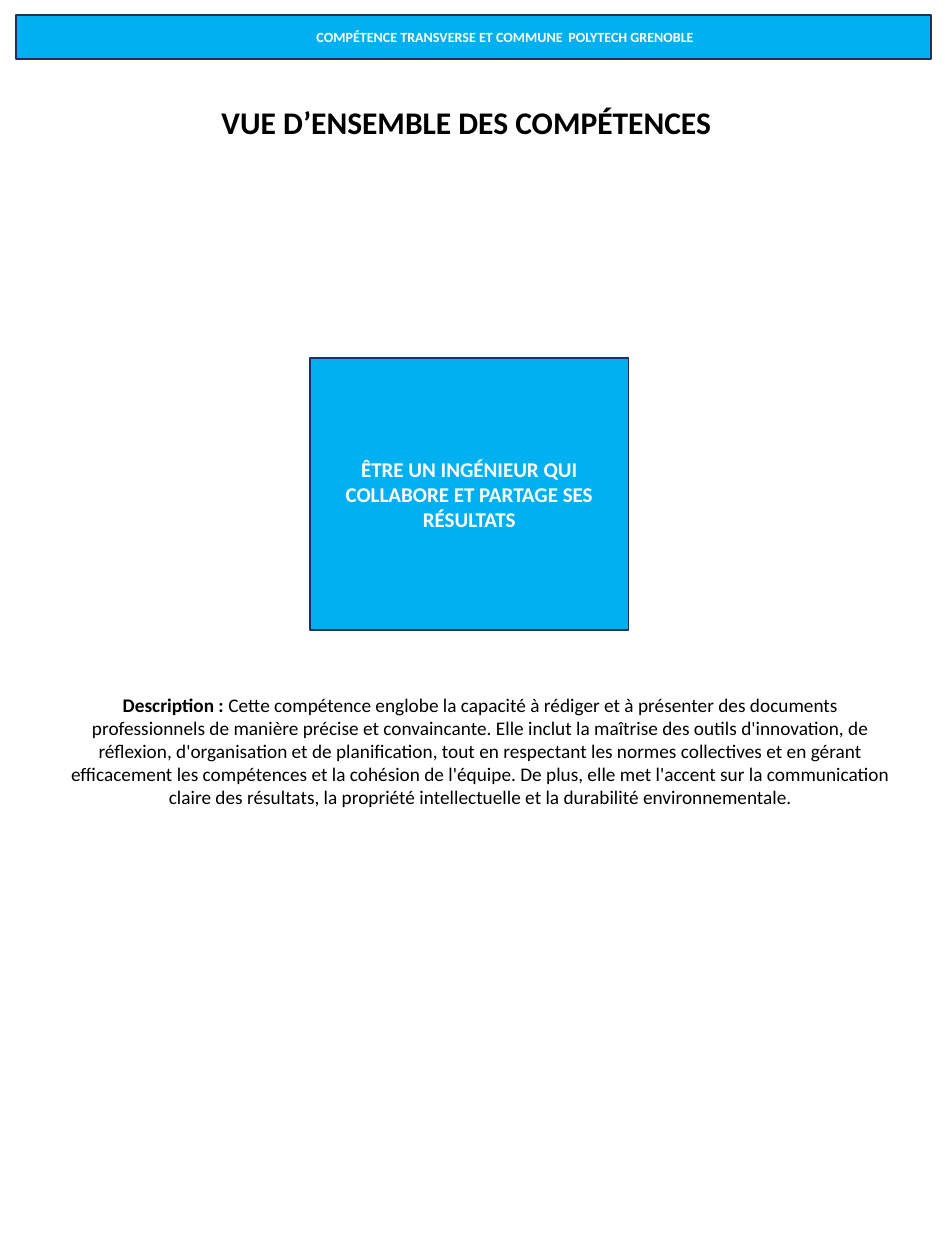
from lxml import etree
from pptx import Presentation
from pptx import util as u
from pptx.dml.color import RGBColor
from pptx.enum import shapes, text
from pptx.oxml.ns import qn

FONT = "Calibri"
BLUE, NAVY, WHITE, BLACK = "00B0F0", "1E3256", "FFFFFF", "000000"
DESCRIPTION = (
    "Cette compétence englobe la capacité à rédiger et à présenter des documents "
    "professionnels de manière précise et convaincante. Elle inclut la maîtrise des "
    "outils d'innovation, de réflexion, d'organisation et de planification, tout en "
    "respectant les normes collectives et en gérant efficacement les compétences et "
    "la cohésion de l'équipe. De plus, elle met l'accent sur la communication claire "
    "des résultats, la propriété intellectuelle et la durabilité environnementale."
)


def color(value):
    """Return the colour for a hex string."""
    return RGBColor.from_string(value)


def set_format(target, values):
    """Set each attribute in a dict of format values."""
    for name, value in values.items():
        setattr(target, name, value)


def add_tabs(para, stops):
    """Give a paragraph left tab stops, in inches."""
    tabs = etree.SubElement(para._p.get_or_add_pPr(), qn("a:tabLst"))
    for stop in stops:
        etree.SubElement(tabs, qn("a:tab"), pos=str(u.Inches(stop)), algn="l")


def write(para, spans, size, fill, align):
    """Fill a paragraph with (wording, bold) spans."""
    para.alignment = align
    for wording, bold in spans:
        span = para.add_run()
        span.text = wording
        set_format(span.font, {"name": FONT, "size": u.Pt(size), "bold": bold})
        span.font.color.rgb = color(fill)


def add_label(page, place, spans, size, align, wrap=True):
    """Add a text box with black text."""
    box = page.shapes.add_textbox(*map(u.Inches, place))
    set_format(box.text_frame, {
        "word_wrap": wrap, "auto_size": text.MSO_AUTO_SIZE.SHAPE_TO_FIT_TEXT})
    write(box.text_frame.paragraphs[0], spans, size, BLACK, align)


def add_panel(page, place, wording, size, tabs=(), after=0):
    """Add a blue rectangle with centred bold white text."""
    box = page.shapes.add_shape(shapes.MSO_SHAPE.RECTANGLE, *map(u.Inches, place))
    box.shadow.inherit = False
    box.fill.solid()
    box.fill.fore_color.rgb = color(BLUE)
    box.line.color.rgb = color(NAVY)
    box.line.width = u.Pt(1)
    set_format(box.text_frame, {
        "word_wrap": True, "vertical_anchor": text.MSO_ANCHOR.MIDDLE})
    para = box.text_frame.paragraphs[0]
    if tabs:
        add_tabs(para, tabs)
    para.space_after = u.Pt(after)
    write(para, [(wording, True)], size, WHITE, text.PP_ALIGN.CENTER)


def main():
    """Build the skills overview page."""
    deck = Presentation()
    set_format(deck, {"slide_width": u.Inches(7.5), "slide_height": u.Inches(10)})
    page = deck.slides.add_slide(deck.slide_layouts[6])
    add_label(page, (1.66, 0.77, 4.13, 0.4),
              [("VUE D’ENSEMBLE DES COMPÉTENCES", True)], 18,
              text.PP_ALIGN.LEFT, wrap=False)
    add_panel(page, (0.13, 0.12, 7.26, 0.35),
              "\tCOMPÉTENCE TRANSVERSE ET COMMUNE\tPOLYTECH GRENOBLE", 8,
              tabs=(0.5, 2.5))
    add_panel(page, (2.46, 2.84, 2.53, 2.16),
              "ÊTRE UN INGÉNIEUR QUI COLLABORE ET PARTAGE SES RÉSULTATS", 12,
              after=6)
    add_label(page, (0.41, 5.45, 6.81, 1.21),
              [("Description : ", True), (DESCRIPTION, False)], 11,
              text.PP_ALIGN.CENTER)
    deck.save("out.pptx")


if __name__ == "__main__":
    main()
